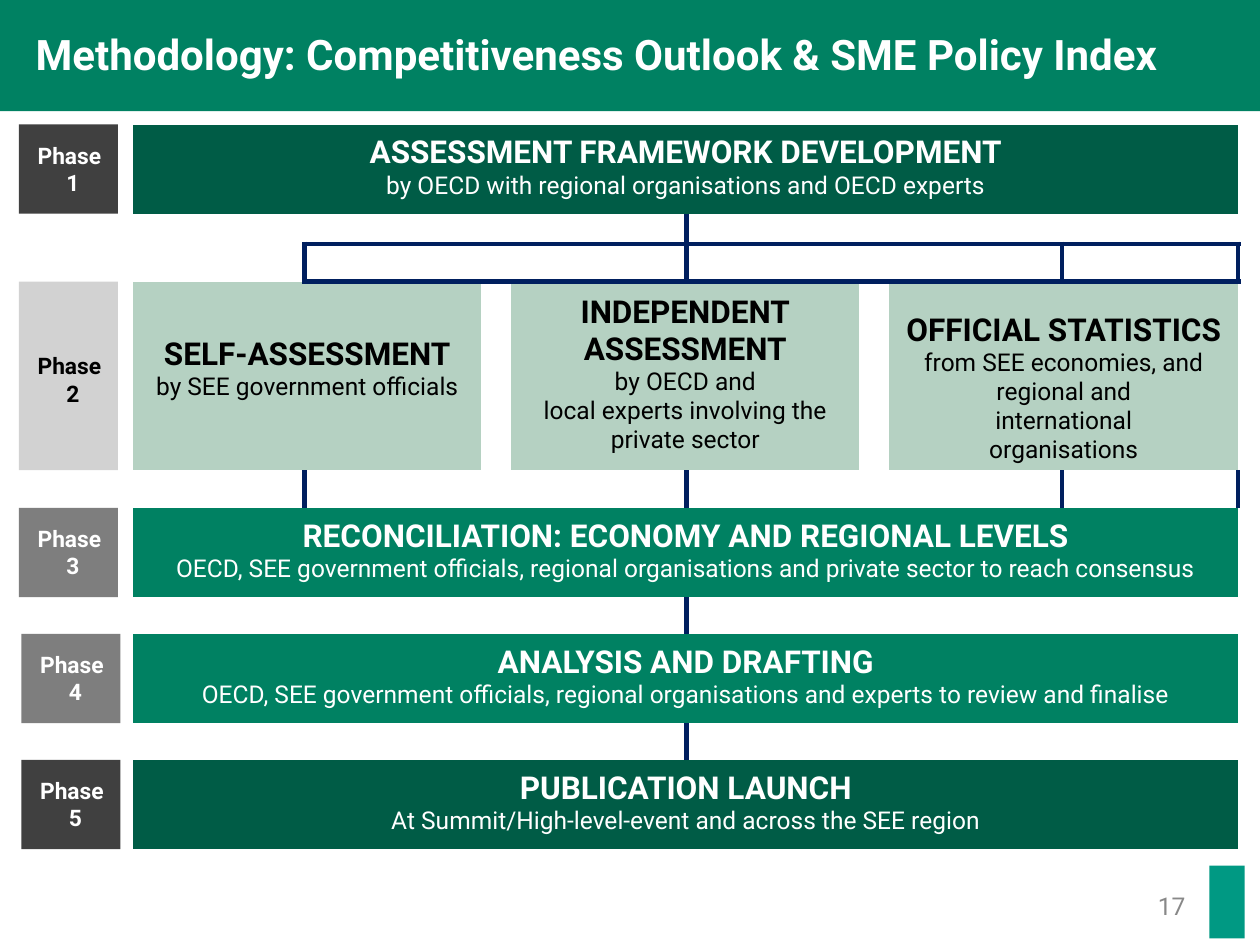
from itertools import accumulate

from lxml.etree import SubElement
from pptx import Presentation
from pptx.dml.color import RGBColor
from pptx.enum.shapes import MSO_SHAPE
from pptx.enum.text import MSO_ANCHOR, PP_ALIGN
from pptx.oxml.ns import qn
from pptx.util import Cm, Pt

COLOURS = {
    "green": "008162", "dark_green": "005C46", "pale_green": "B5D1C2",
    "navy": "001F5F", "charcoal": "404040", "grey": "7E7E7E",
    "light_grey": "D2D2D2", "number": "888888", "teal": "009983",
    "white": "FFFFFF", "black": "000000",
}
FONT = "Roboto"
NO_GRID_STYLE = "{2D5ABB26-0587-4C30-8999-92F81FD0307C}"
COLUMNS = [3.45, 3.56, 0.61, 3.53, 3.48, 0.61, 3.48, 3.55]
ROWS = [1.8, 0.61, 0.76, 3.8, 0.76, 1.8, 0.74, 1.8, 0.74, 1.8]
TABLE_BOX = (2.69, 2.51, sum(COLUMNS), sum(ROWS))

BANDS = {
    0: ("dark_green", "ASSESSMENT FRAMEWORK DEVELOPMENT",
        "by OECD with regional organisations and OECD experts"),
    5: ("green", "RECONCILIATION: ECONOMY AND REGIONAL LEVELS",
        "OECD, SEE government officials, regional organisations and private sector to reach consensus"),
    7: ("green", "ANALYSIS AND DRAFTING",
        "OECD, SEE government officials, regional organisations and experts to review and finalise"),
    9: ("dark_green", "PUBLICATION LAUNCH",
        "At Summit/High-level-event and across the SEE region"),
}
SOURCES_ROW = 3
SOURCES = [
    (0, 1.09, ["SELF-ASSESSMENT"], ["by SEE government officials"]),
    (3, 0.25, ["INDEPENDENT", "ASSESSMENT"],
     ["by OECD and", "local experts involving the", "private sector"]),
    (6, 0.61, ["OFFICIAL STATISTICS"],
     ["from SEE economies, and", "regional and", "international", "organisations"]),
]
CENTRE_LINE = [(0, 3, "R"), (4, 7, "L")]
BRANCHES = [(0, 0, "R"), (1, 3, "LR"), (4, 6, "LR"), (7, 7, "L")]
TOPPED_BRANCHES = [(0, 0, "R"), (1, 3, "LRT"), (4, 6, "LRT"), (7, 7, "L")]
LINKS = {1: CENTRE_LINE, 2: TOPPED_BRANCHES, 4: BRANCHES, 6: CENTRE_LINE, 8: CENTRE_LINE}
PHASES = [
    (0, 0.38, "charcoal", "white", 0.34),
    (3, 0.38, "light_grey", "black", 1.42),
    (5, 0.38, "grey", "white", 0.34),
    (7, 0.43, "grey", "white", 0.34),
    (9, 0.43, "charcoal", "white", 0.34),
]


def colour(name):
    """Return the named colour."""
    return RGBColor.from_string(COLOURS[name])


def add_span(para, text, size, ink, bold=False):
    """Add one styled run to a paragraph."""
    span = para.add_run()
    span.text = text
    span.font.name, span.font.size, span.font.bold = FONT, Pt(size), bold
    span.font.color.rgb = colour(ink)


def add_block(page, box, fill):
    """Add a plain filled rectangle."""
    block = page.shapes.add_shape(MSO_SHAPE.RECTANGLE, *map(Cm, box))
    block.shadow.inherit = False
    block.fill.solid()
    block.fill.fore_color.rgb = colour(fill)
    block.line.fill.background()
    return block


def clear_margins(frame, top=0):
    """Set the top inset of a text frame and remove the others."""
    frame.margin_left = frame.margin_right = frame.margin_bottom = 0
    frame.margin_top = Cm(top)


def add_label(page, box, text, size, ink, bold=False):
    """Add a text box holding a single line."""
    frame = page.shapes.add_textbox(*map(Cm, box)).text_frame
    frame.word_wrap = True
    clear_margins(frame)
    add_span(frame.paragraphs[0], text, size, ink, bold)


def add_header(page, box):
    """Draw the title band."""
    left, top, width, height = box
    add_block(page, box, "green")
    add_label(page, (left + 0.72, top + 0.58, width - 1.45, height - 1.14),
              "Methodology: Competitiveness Outlook & SME Policy Index", 24, "white", True)


def add_borders(cell, sides):
    """Draw navy borders on the given sides of a cell."""
    properties = cell._tc.get_or_add_tcPr()
    for side in sides:
        line = SubElement(properties, qn(f"a:ln{side}"), w=str(Pt(3)))
        fill = SubElement(line, qn("a:solidFill"))
        SubElement(fill, qn("a:srgbClr"), val=COLOURS["navy"])


def merge_cells(table, row, first, last):
    """Merge part of a row and return its cell."""
    cell = table.cell(row, first)
    if last > first:
        cell.merge(table.cell(row, last))
    return cell


def fill_cell(cell, fill, ink, top, headings, details):
    """Fill a cell with bold headings above smaller details."""
    clear_margins(cell, top)
    cell.fill.solid()
    cell.fill.fore_color.rgb = colour(fill)
    lines = [(text, 18, True) for text in headings] + [(text, 14, False) for text in details]
    frame = cell.text_frame
    for index, (text, size, bold) in enumerate(lines):
        para = frame.add_paragraph() if index else frame.paragraphs[0]
        para.alignment = PP_ALIGN.CENTER
        add_span(para, text, size, ink, bold)


def add_process(page, box):
    """Build the process table with its bands, sources and linking lines."""
    table = page.shapes.add_table(len(ROWS), len(COLUMNS), *map(Cm, box)).table
    table.first_row = table.horz_banding = False
    table._tbl.tblPr.find(qn("a:tableStyleId")).text = NO_GRID_STYLE
    for column, width in zip(table.columns, COLUMNS):
        column.width = Cm(width)
    for row, height in zip(table.rows, ROWS):
        row.height = Cm(height)
    for cell in table.iter_cells():
        clear_margins(cell)
        cell.text_frame.paragraphs[0]._p.get_or_add_endParaRPr().set("sz", "800")
    for row, (fill, heading, detail) in BANDS.items():
        band = merge_cells(table, row, 0, len(COLUMNS) - 1)
        fill_cell(band, fill, "white", 0.2, [heading], [detail])
    for first, top, headings, details in SOURCES:
        source = merge_cells(table, SOURCES_ROW, first, first + 1)
        fill_cell(source, "pale_green", "black", top, headings, details)
    for row, links in LINKS.items():
        for first, last, sides in links:
            add_borders(merge_cells(table, row, first, last), sides)


def add_phases(page, box):
    """Stack the phase labels beside the table rows."""
    left, top, width, _ = box
    row_tops = list(accumulate(ROWS, initial=top))
    for number, (row, offset, fill, ink, inset) in enumerate(PHASES, 1):
        block = add_block(page, (left + offset, row_tops[row], width, ROWS[row]), fill)
        frame = block.text_frame
        frame.vertical_anchor = MSO_ANCHOR.TOP
        clear_margins(frame, inset)
        para = frame.paragraphs[0]
        para.alignment = PP_ALIGN.LEFT
        properties = para._p.get_or_add_pPr()
        properties.set("marL", str(Cm(0.96)))
        properties.set("indent", str(Cm(-0.58)))
        add_span(para, "Phase", 13, ink, True)
        para.add_line_break()
        add_span(para, str(number), 13, ink, True)


def add_footer(page, box):
    """Place the page number and a plain marker."""
    left, top, width, height = box
    add_label(page, (left, top + 0.52, 0.9, 0.74), "17", 14, "number")
    add_block(page, (left + width - 0.71, top, 0.71, height), "teal")


def main():
    """Build and save the slide."""
    deck = Presentation()
    deck.slide_width, deck.slide_height = Cm(25.4), Cm(19.05)
    page = deck.slides.add_slide(deck.slide_layouts[6])
    add_header(page, (0, 0, 25.4, 2.24))
    add_process(page, TABLE_BOX)
    add_phases(page, (0, TABLE_BOX[1], 2, TABLE_BOX[3]))
    add_footer(page, (23.34, 17.45, 1.75, 1.47))
    deck.save("out.pptx")


if __name__ == "__main__":
    main()
